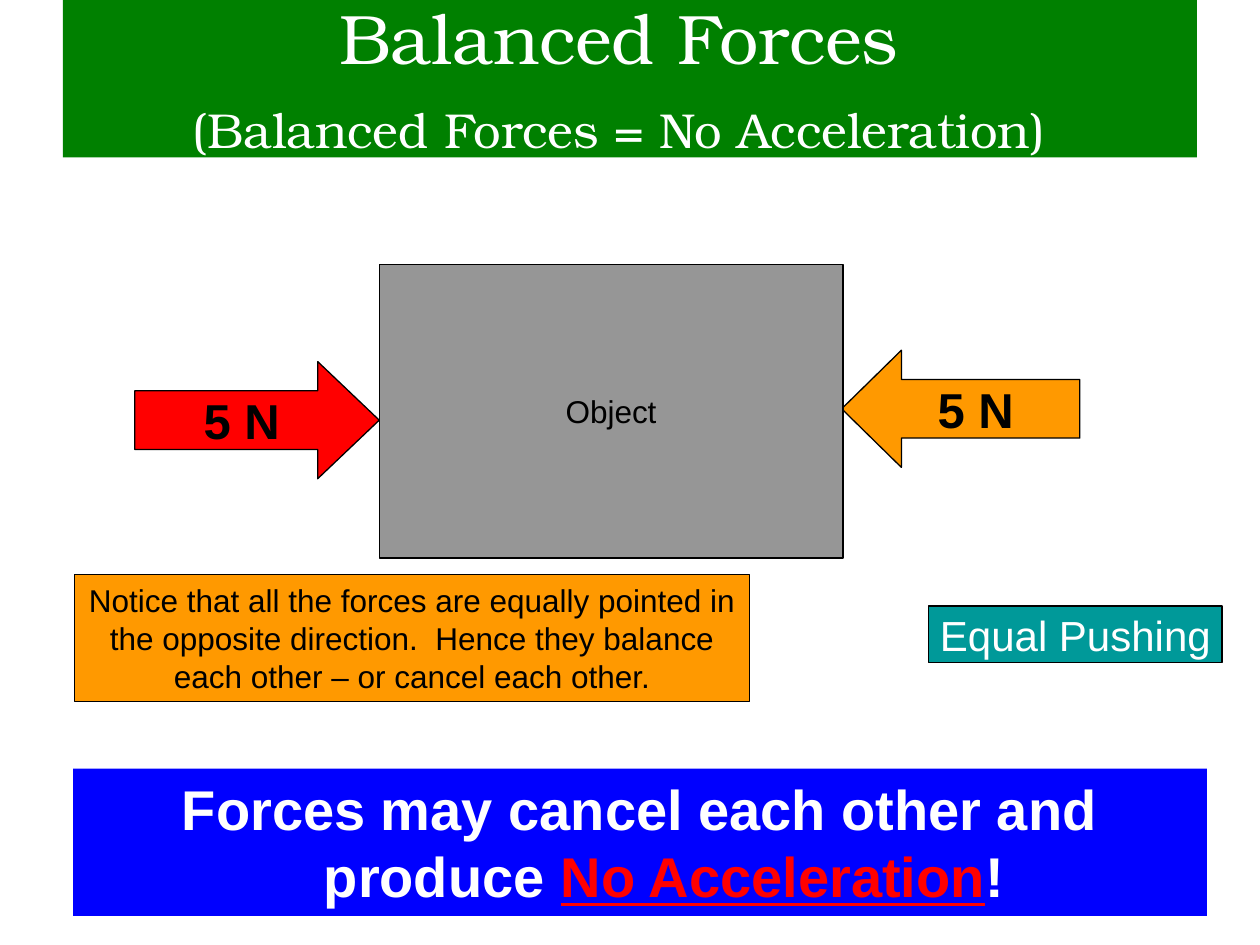
from dataclasses import dataclass
from typing import Optional

from pptx import Presentation
from pptx.dml.color import RGBColor
from pptx.enum.shapes import MSO_SHAPE as Preset
from pptx.enum.text import MSO_ANCHOR as Anchor, MSO_AUTO_SIZE as AutoSize, PP_ALIGN as Align
from pptx.util import Inches, Pt

COLORS = {
    "black": "000000", "white": "FFFFFF", "green": "008000", "red": "FF0000",
    "orange": "FF9900", "teal": "009999", "gray": "969696", "blue": "0000FF",
}


@dataclass
class Box:
    text: str
    left: float
    top: float
    width: float
    height: float
    fill: str
    size: float
    color: str = "black"
    bold: Optional[bool] = None
    font: str = "Arial"
    preset: Preset = Preset.RECTANGLE
    head: Optional[float] = None
    outlined: bool = True
    wrap: bool = False
    grow: bool = False
    anchor: Anchor = Anchor.MIDDLE


TITLE = Box("Balanced Forces \v", 0.5, 0, 9, 1.25, "green", 40, "white",
            font="TeX Gyre Bonum", outlined=False, wrap=True)
DIAGRAM = [
    Box("5 N", 1.07, 2.87, 1.94, 0.93, "red", 28, bold=True,
        preset=Preset.RIGHT_ARROW, head=0.525),
    Box("5 N", 6.68, 2.78, 1.89, 0.93, "orange", 28, bold=True,
        preset=Preset.LEFT_ARROW, head=0.51),
    Box("Equal Pushing", 7.37, 4.81, 2.33, 0.45, "teal", 24, "white"),
    Box("Object", 3.01, 2.1, 3.68, 2.33, "gray", 18),
    Box("Notice that all the forces are equally pointed in the opposite direction.  "
        "Hence they balance each other – or cancel each other.",
        0.59, 4.56, 5.36, 1.01, "orange", 18, wrap=True, grow=True),
]
CONCLUSION = Box("Forces may cancel each other and produce ", 0.58, 6.1, 9, 1.17, "blue", 32,
                 "white", bold=True, outlined=False, wrap=True, grow=True, anchor=Anchor.TOP)


def rgb(name: str) -> RGBColor:
    return RGBColor.from_string(COLORS[name])


def draw_box(slide, box: Box):
    """Draw the box with its text and return the paragraph."""
    shape = slide.shapes.add_shape(box.preset, Inches(box.left), Inches(box.top),
                                   Inches(box.width), Inches(box.height))
    shape.shadow.inherit = False
    shape.fill.solid()
    shape.fill.fore_color.rgb = rgb(box.fill)
    if box.outlined:
        shape.line.color.rgb = rgb("black")
        shape.line.width = Pt(0.75)
    else:
        shape.line.fill.background()
    if box.head is not None:
        shape.adjustments[1] = box.head

    frame = shape.text_frame
    frame.word_wrap = box.wrap
    frame.vertical_anchor = box.anchor
    if box.grow:
        frame.auto_size = AutoSize.SHAPE_TO_FIT_TEXT
    paragraph = frame.paragraphs[0]
    paragraph.text = box.text
    paragraph.alignment = Align.CENTER
    font = paragraph.font
    font.name, font.size, font.bold = box.font, Pt(box.size), box.bold
    font.color.rgb = rgb(box.color)
    return paragraph


def add_run(paragraph, text: str):
    run = paragraph.add_run()
    run.text = text
    return run


def draw_title(slide) -> None:
    paragraph = draw_box(slide, TITLE)
    add_run(paragraph, "(Balanced Forces = No Acceleration)").font.size = Pt(28)
    add_run(paragraph, " ")  # full-size space sets the height of the second line


def draw_conclusion(slide) -> None:
    paragraph = draw_box(slide, CONCLUSION)
    paragraph.space_before = Pt(3.5)
    properties = paragraph._p.get_or_add_pPr()
    properties.set("marL", str(Inches(0.38)))
    properties.set("indent", str(Inches(-0.38)))
    emphasis = add_run(paragraph, "No Acceleration").font
    emphasis.color.rgb = rgb("red")
    emphasis.underline = True
    add_run(paragraph, "!")


def main() -> None:
    presentation = Presentation()
    presentation.slide_width, presentation.slide_height = Inches(10), Inches(7.5)
    slide = presentation.slides.add_slide(presentation.slide_layouts[6])
    draw_title(slide)
    for box in DIAGRAM:
        draw_box(slide, box)
    draw_conclusion(slide)
    presentation.save("out.pptx")


if __name__ == "__main__":
    main()
